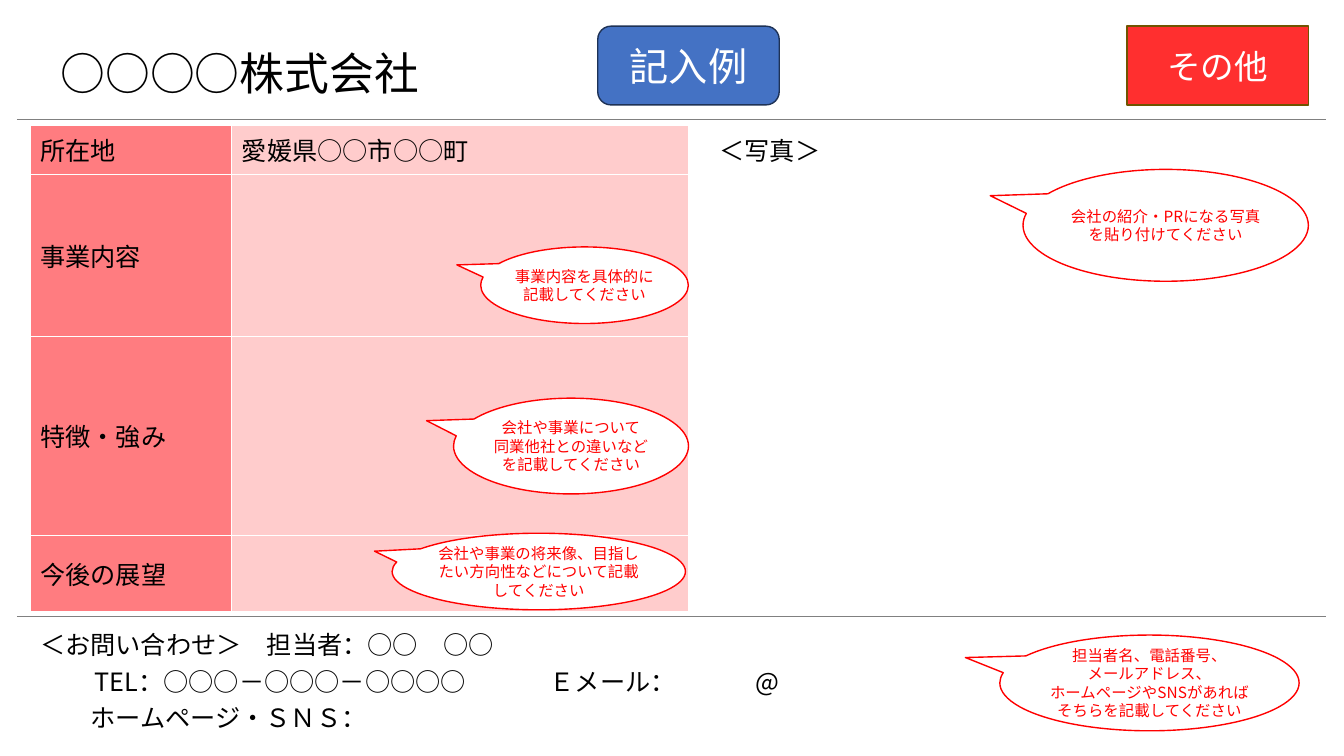
from dataclasses import dataclass

from lxml.etree import SubElement
from pptx import Presentation
from pptx.dml.color import RGBColor
from pptx.enum.shapes import MSO_CONNECTOR as Connector, MSO_SHAPE as Shape
from pptx.enum.text import MSO_ANCHOR as Anchor, MSO_AUTO_SIZE as AutoSize, PP_ALIGN as Align
from pptx.oxml.ns import qn
from pptx.util import Pt


@dataclass(frozen=True)
class Theme:
    font: str = "Noto Sans CJK JP"
    black: str = "000000"
    white: str = "FFFFFF"
    rule: str = "808080"
    label: str = "FF7C80"
    entry: str = "FFCCCC"
    note: str = "FF0000"
    category: str = "FF2F2F"
    category_edge: str = "705400"
    sample: str = "4472C4"
    sample_edge: str = "1E3256"
    title_size: int = 32
    sample_size: int = 28
    category_size: int = 24
    body_size: int = 18
    note_size: int = 11


theme = Theme()


def write_text(frame, lines, size=theme.body_size, color=theme.black, **paragraph_format):
    """Fill a text frame, one paragraph per line, in the Latin and East Asian theme font."""
    frame.word_wrap = True
    for index, line in enumerate(lines):
        paragraph = frame.add_paragraph() if index else frame.paragraphs[0]
        for name, value in paragraph_format.items():
            setattr(paragraph, name, value)
        run = paragraph.add_run()
        run.text = line
        for name, value in {"size": Pt(size), "bold": False, "name": theme.font}.items():
            setattr(run.font, name, value)
        run.font.color.rgb = RGBColor.from_string(color)
        SubElement(run.font._element, qn("a:ea"), typeface=theme.font)


def add_filled_shape(kind, box, fill, edge):
    shape = slide.shapes.add_shape(kind, *map(Pt, box))
    shape.shadow.inherit = False
    shape.fill.solid()
    shape.fill.fore_color.rgb = RGBColor.from_string(fill)
    shape.line.color.rgb = RGBColor.from_string(edge)
    shape.line.width = Pt(1)
    shape.text_frame.vertical_anchor = Anchor.MIDDLE
    return shape


presentation = Presentation()
presentation.slide_width, presentation.slide_height = Pt(960), Pt(540)
slide = presentation.slides.add_slide(presentation.slide_layouts[5])

# Title
title = slide.shapes.title
title_box = {"left": 36, "top": 18.7, "width": 661.7, "height": 70.6}
for name, value in title_box.items():
    setattr(title, name, Pt(value))
title.text_frame.vertical_anchor = Anchor.MIDDLE
title.text_frame.auto_size = AutoSize.NONE
write_text(title.text_frame, ["○○○○株式会社"], theme.title_size,
           alignment=Align.LEFT, line_spacing=0.9)

# Rules above and below the main area
for rule_top in (85, 440.6):
    rule = slide.shapes.add_connector(
        Connector.STRAIGHT, Pt(12), Pt(rule_top), Pt(947.5), Pt(rule_top))
    rule.line.color.rgb = RGBColor.from_string(theme.rule)
    rule.line.width = Pt(0.5)
    SubElement(rule._element.spPr, qn("a:effectLst"))

# Contact details and photo heading
text_boxes = [
    ((21.6, 442, 913, 84.2), [
        "＜お問い合わせ＞　担当者：○○　○○",
        "\tTEL：○○○－○○○－○○○○\tＥメール：\t@",
        "\tホームページ・ＳＮＳ：",
    ]),
    ((506.9, 88.6, 139.7, 31.7), ["＜写真＞"]),
]
contact_tabs = {1: (39, 364, 511), 2: (36,)}
for box, lines in text_boxes:
    text_box = slide.shapes.add_textbox(*map(Pt, box))
    write_text(text_box.text_frame, lines, line_spacing=1.2)
    for index, paragraph in enumerate(text_box.text_frame.paragraphs):
        if index in contact_tabs:
            tab_list = SubElement(paragraph._p.get_or_add_pPr(), qn("a:tabLst"))
            for position in contact_tabs[index]:
                SubElement(tab_list, qn("a:tab"), pos=str(Pt(position)), algn="l")

# Company profile table
profile_rows = [
    (35.3, "所在地", "愛媛県○○市○○町"),
    (115.9, "事業内容", ""),
    (141.9, "特徴・強み", ""),
    (54.7, "今後の展望", ""),
]
profile = slide.shapes.add_table(
    len(profile_rows), 2, Pt(21.6), Pt(89.3), Pt(470.2), Pt(347.8)).table
profile.first_row = profile.horz_banding = False
for column, width in zip(profile.columns, (144, 326.2)):
    column.width = Pt(width)
for row, (height, *texts) in zip(profile.rows, profile_rows):
    row.height = Pt(height)
    for cell, text, fill in zip(row.cells, texts, (theme.label, theme.entry)):
        cell.fill.solid()
        cell.fill.fore_color.rgb = RGBColor.from_string(fill)
        cell.vertical_anchor = Anchor.MIDDLE
        if text:
            write_text(cell.text_frame, [text])

# Badges beside the title
badges = [
    (Shape.RECTANGLE, 805, "その他", theme.category_size, theme.category, theme.category_edge),
    (Shape.ROUNDED_RECTANGLE, 427, "記入例", theme.sample_size, theme.sample, theme.sample_edge),
]
for kind, left, text, size, fill, edge in badges:
    badge = add_filled_shape(kind, (left, 18.7, 129.6, 56.2), fill, edge)
    write_text(badge.text_frame, [text], size, theme.white, alignment=Align.CENTER)

# Callouts explaining what to fill in
callouts = [
    ((343.4, 176.4, 148.3, 54.7), -0.615, ["事業内容を具体的に", "記載してください"]),
    ((324, 284.4, 167.8, 68.4), -0.615,
     ["会社や事業について", "同業他社との違いなど", "を記載してください"]),
    ((280.1, 380.9, 209.5, 54.7), -0.56,
     ["会社や事業の将来像、目指したい方向性などについて記載してください"]),
    ((730.8, 121, 203.8, 79.9), -0.615, ["会社の紹介・PRになる写真を貼り付けてください"]),
    ((714.2, 453.6, 213.8, 68.4), -0.615,
     ["担当者名、電話番号、", "メールアドレス、",
      "ホームページやSNSがあればそちらを記載してください"]),
]
for box, tip_x, lines in callouts:
    callout = add_filled_shape(Shape.OVAL_CALLOUT, box, theme.white, theme.note)
    callout.adjustments[0], callout.adjustments[1] = tip_x, -0.265
    for side in ("left", "top", "right", "bottom"):
        setattr(callout.text_frame, f"margin_{side}", 0)
    write_text(callout.text_frame, lines, theme.note_size, theme.note, alignment=Align.CENTER)

presentation.save("out.pptx")
